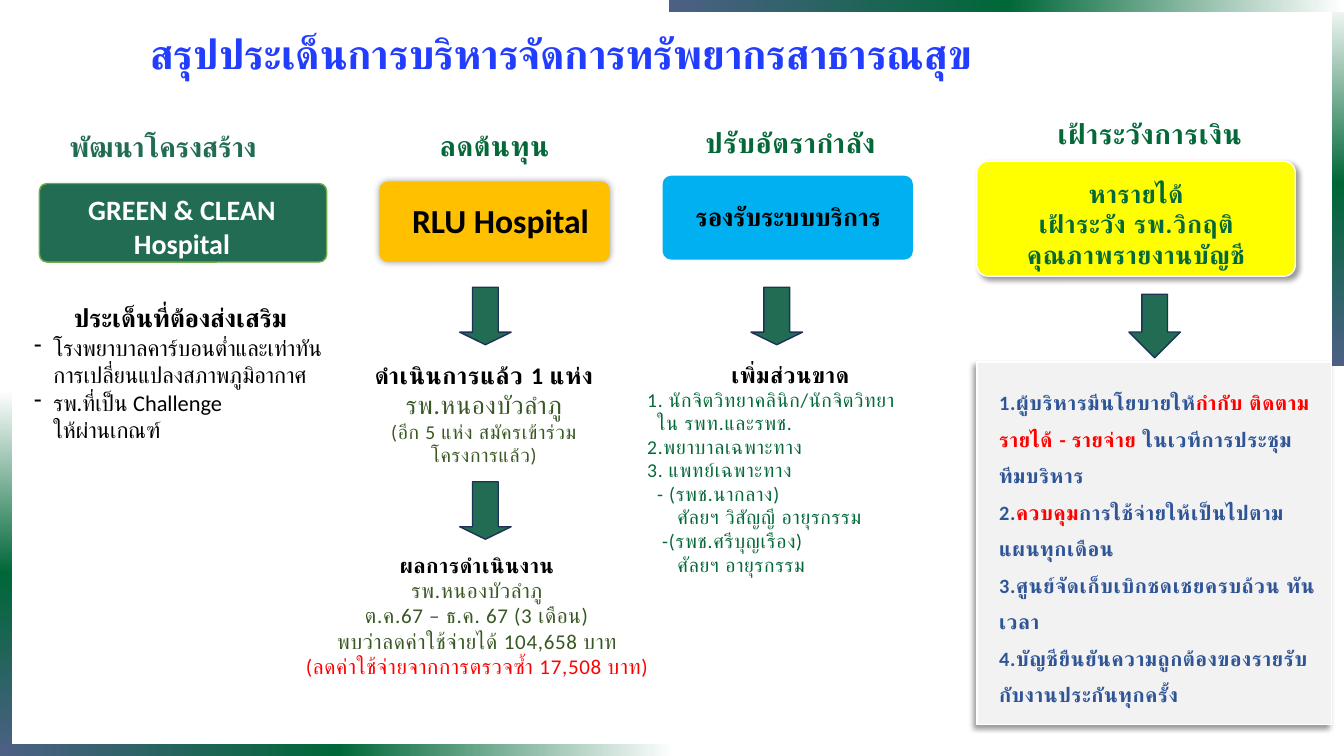
"""Build a one-slide summary of public health resource management."""
from copy import deepcopy
from dataclasses import dataclass

from lxml import etree
from pptx import Presentation
from pptx import util as u
from pptx.dml.color import RGBColor
from pptx.enum import shapes, text
from pptx.oxml import ns

WIDTH, HEIGHT = u.Inches(13.33), u.Inches(7.5)
LEFT, CENTER = text.PP_ALIGN.LEFT, text.PP_ALIGN.CENTER
TOP, BOTTOM = text.MSO_ANCHOR.TOP, text.MSO_ANCHOR.BOTTOM


@dataclass(frozen=True)
class Theme:
    """Hold the colours, font and type sizes of the slide."""
    font: str = "Calibri"
    title_blue: str = "233DFF"
    green: str = "046839"
    pine: str = "216C53"
    olive: str = "385723"
    lime: str = "70AD47"
    navy: str = "1E3256"
    blue: str = "2F5597"
    sky: str = "00B0F0"
    amber: str = "FFC000"
    yellow: str = "FFFF00"
    red: str = "FF0000"
    grey: str = "F2F2F2"
    black: str = "000000"
    white: str = "FFFFFF"
    frame: tuple = ("FFFFFF", "006738", "4C6085")
    title: float = 29.3
    big: float = 24
    heading: float = 20
    label: float = 18
    lead: float = 17
    body: float = 16
    result: float = 15
    finance: float = 14.5
    small: float = 14


T = Theme()


def area(left, top, width, height):
    """Turn percentages of the slide into a position and size."""
    return (round(WIDTH * left / 100), round(HEIGHT * top / 100),
            round(WIDTH * width / 100), round(HEIGHT * height / 100))


def assign(target, values):
    """Set every attribute named in a dict of format values."""
    for name, value in values.items():
        setattr(target, name, value)


def span(words, size, color, bold=False, spacing=0.5):
    """Describe one stretch of equally formatted words."""
    return words, size, color, bold, spacing


def line(*spans, align=CENTER, indent=0, hanging=0, bullet=None, **layout):
    """Describe one paragraph, with indents in inches."""
    return spans, indent, hanging, bullet, {"alignment": align, **layout}


def add_span(para, words, size, color, bold, spacing):
    """Add formatted words, with a line break at each newline."""
    for index, part in enumerate(words.split("\n")):
        if index:
            para.add_line_break()
        run = para.add_run()
        run.text = part
        assign(run.font, {"name": T.font, "size": u.Pt(size), "bold": bold})
        run.font.color.rgb = RGBColor.from_string(color)
        if spacing:
            run.font._element.set("spc", str(round(spacing * 100)))


def write(box, lines, inset=0, anchor=TOP):
    """Fill a box with the described paragraphs."""
    frame = box.text_frame
    sides = ("margin_left", "margin_right", "margin_top", "margin_bottom")
    assign(frame, {"word_wrap": True, "vertical_anchor": anchor,
                   "auto_size": text.MSO_AUTO_SIZE.NONE})
    assign(frame, dict(zip(sides, (u.Inches(inset), u.Inches(inset),
                                   u.Inches(inset / 2), u.Inches(inset / 2)))))
    for index, (spans, indent, hanging, bullet, layout) in enumerate(lines):
        para = frame.add_paragraph() if index else frame.paragraphs[0]
        props = para._p.get_or_add_pPr()
        if indent:
            props.set("marL", str(u.Inches(indent)))
            props.set("indent", str(-u.Inches(hanging)))
        if bullet:
            etree.SubElement(props, ns.qn("a:buChar"), char=bullet)
        assign(para, layout)
        for piece in spans:
            add_span(para, *piece)


def add_text(page, place, lines, **layout):
    """Add a text box."""
    write(page.shapes.add_textbox(*area(*place)), lines, **layout)


def add_heading(page, place, words, color=T.green, align=CENTER, anchor=BOTTOM, spacing=0.5):
    """Add a column heading."""
    heading = span(words, T.heading, color, True, spacing)
    add_text(page, place, [line(heading, align=align)], inset=0.1, anchor=anchor)


def add_block(page, kind, place, fill, outline, adjust=(), shadow=None):
    """Add a filled shape; shadow is blur, distance and angle."""
    block = page.shapes.add_shape(kind, *area(*place))
    block.fill.solid()
    block.fill.fore_color.rgb = RGBColor.from_string(fill)
    block.line.color.rgb = RGBColor.from_string(outline)
    block.line.width = u.Pt(1)
    for index, value in enumerate(adjust):
        block.adjustments[index] = value
    block.shadow.inherit = False
    if shadow:
        blur, distance, angle = shadow
        effects = block._element.spPr.find(ns.qn("a:effectLst"))
        outer = etree.SubElement(
            effects, ns.qn("a:outerShdw"), blurRad=str(u.Pt(blur)),
            dist=str(u.Pt(distance)), dir=str(angle * 60000), rotWithShape="0")
        tint = etree.SubElement(outer, ns.qn("a:srgbClr"), val=T.black)
        etree.SubElement(tint, ns.qn("a:alpha"), val="40000")


def add_card(page, place, fill, outline, label_place, labels, shadow=None):
    """Add a rounded card and its label."""
    add_block(page, shapes.MSO_SHAPE.ROUNDED_RECTANGLE, place, fill, outline, (0.098,), shadow)
    add_text(page, label_place, [line(label) for label in labels])


def add_arrow(page, left, top, height=7.6, head=0.243):
    """Add a downward block arrow."""
    add_block(page, shapes.MSO_SHAPE.DOWN_ARROW, (left, top, 3.83, height),
              T.pine, T.navy, (0.5, head))


def add_frame_bar(page, place, angle):
    """Add a three-colour gradient bar at the slide's edge."""
    bar = page.shapes.add_shape(shapes.MSO_SHAPE.RECTANGLE, *area(*place))
    bar.shadow.inherit = False
    bar.line.fill.background()
    bar.fill.gradient()
    bar.fill.gradient_angle = angle
    stops = next(bar._element.spPr.iter(ns.qn("a:gsLst")))
    stops.insert(1, deepcopy(stops[0]))
    for index, stop in enumerate(bar.fill.gradient_stops):
        stop.position = index / 2
        stop.color.rgb = RGBColor.from_string(T.frame[index])


def add_structure(page):
    """Add the column on structural development."""
    add_heading(page, (4.43, 16.53, 21.75, 5.87), "พัฒนาโครงสร้าง", T.pine, LEFT, TOP, 0)
    add_card(page, (2.93, 24.27, 21.38, 10.4), T.pine, T.lime, (4.5, 25.47, 18.08, 9.07),
             [span("GREEN & CLEAN Hospital", T.heading, T.white, True, 0)])
    goals = ["โรงพยาบาลคาร์บอนต่ำและเท่าทันการเปลี่ยนแปลงสภาพภูมิอากาศ",
             "รพ.ที่เป็น Challenge\nให้ผ่านเกณฑ์"]
    add_text(page, (2.55, 40, 21.75, 33.73), [
        line(span("ประเด็นที่ต้องส่งเสริม", T.label, T.black, True, 0)),
        *(line(span(goal, T.body, T.black, spacing=0), align=LEFT, indent=0.19,
               hanging=0.19, bullet="-", space_before=u.Pt(1)) for goal in goals)])


def add_cost(page):
    """Add the column on cost reduction."""
    add_heading(page, (28.88, 14.8, 15.83, 7.33), "ลดต้นทุน")
    add_card(page, (28.28, 24.13, 17.03, 10.4), T.amber, T.amber, (29.33, 26.4, 15.83, 9.6),
             [span("RLU Hospital", T.big, T.black, True, 0)], (5, 0, 0))
    add_arrow(page, 34.2, 38)
    add_text(page, (26.63, 47.73, 18.75, 10.27), [
        line(span("ดำเนินการแล้ว 1 แห่ง", T.lead, T.black, True)),
        line(span("รพ.หนองบัวลำภู", T.label, T.olive)),
        line(span("(อีก 5 แห่ง สมัครเข้าร่วมโครงการแล้ว)", T.small, T.olive))])
    add_arrow(page, 34.2, 63.73)
    add_text(page, (20.78, 73.07, 29.4, 18.8), [
        line(span("ผลการดำเนินงาน", T.result, T.black, True)),
        line(span("รพ.หนองบัวลำภู", T.result, T.olive)),
        line(span("ต.ค.67 – ธ.ค. 67 (3 เดือน)\nพบว่าลดค่าใช้จ่ายได้ 104,658 บาท", T.result, T.olive)),
        line(span("(ลดค่าใช้จ่ายจากการตรวจซ้ำ 17,508 บาท)", T.result, T.red))])


def add_staffing(page):
    """Add the column on staffing."""
    add_heading(page, (50.48, 14.8, 16.65, 6.93), "ปรับอัตรากำลัง")
    add_card(page, (49.35, 23.33, 18.53, 10.93), T.sky, T.sky, (50.33, 26.67, 16.65, 11.6),
             [span("รองรับระบบบริการ", T.label, T.black, True, 0)])
    add_arrow(page, 55.88, 38)
    needs = [("1. นักจิตวิทยาคลินิก/นักจิตวิทยา\nใน รพท.และรพช.", 0.2, 0.1),
             ("2.พยาบาลเฉพาะทาง", 0.1, 0), ("3. แพทย์เฉพาะทาง", 0.1, 0),
             ("- (รพช.นากลาง)", 0.2, 0), ("ศัลยฯ วิสัญญี อายุรกรรม", 0.4, 0),
             ("-(รพช.ศรีบุญเรือง)", 0.25, 0), ("ศัลยฯ อายุรกรรม", 0.4, 0)]
    add_text(page, (47.4, 47.73, 22.8, 36.4), [
        line(span("เพิ่มส่วนขาด", T.body, T.black, True)),
        *(line(span(need, T.small, T.green), align=LEFT, indent=indent, hanging=hanging)
          for need, indent, hanging in needs)])


def add_finance(page):
    """Add the column on financial monitoring."""
    add_block(page, shapes.MSO_SHAPE.RECTANGLE, (72.68, 47.87, 26.4, 48), T.grey, T.white,
              shadow=(4, 3, 135))
    add_heading(page, (75.45, 14.93, 20.18, 5.6), "เฝ้าระวังการเงิน")
    labels = ("หารายได้", "เฝ้าระวัง รพ.วิกฤติ", "คุณภาพรายงานบัญชี")
    add_card(page, (72.68, 21.33, 23.7, 15.2), T.yellow, T.white, (74.33, 23.6, 20.4, 14.27),
             [span(label, T.label, T.green, True) for label in labels], (4, 3, 45))
    add_arrow(page, 84, 38.93, 8.4, 0.5)
    measures = [
        [("1.ผู้บริหารมีนโยบายให้", T.blue), ("กำกับ ติดตาม รายได้ - รายจ่าย", T.red),
         (" ในเวทีการประชุม\nทีมบริหาร", T.blue)],
        [("2.", T.blue), ("ควบคุม", T.red), ("การใช้จ่ายให้เป็นไปตามแผนทุกเดือน", T.blue)],
        [("3.ศูนย์จัดเก็บเบิกชดเชยครบถ้วน ทันเวลา", T.blue)],
        [("4.บัญชียืนยันความถูกต้องของรายรับกับงานประกันทุกครั้ง", T.blue)]]
    add_text(page, (74.33, 50, 24.08, 37.07), [
        line(*(span(words, T.finance, color, True) for words, color in measure),
             align=LEFT, line_spacing=1.5) for measure in measures])


def main():
    """Build and save the deck."""
    deck = Presentation()
    assign(deck, {"slide_width": WIDTH, "slide_height": HEIGHT})
    page = deck.slides.add_slide(deck.slide_layouts[5])
    title = page.shapes.title
    assign(title, dict(zip(("left", "top", "width", "height"), area(11.18, 2.67, 85, 7.33))))
    write(title, [line(span("สรุปประเด็นการบริหารจัดการทรัพยากรสาธารณสุข", T.title, T.title_blue, True, 0),
                       align=LEFT, line_spacing=u.Pt(41.1))])
    for place, angle in (((99.1, 0, 0.9, 48.4), 270), ((49.8, 0, 50.2, 1.6), 180),
                         ((0, 51.6, 0.9, 48.4), 270), ((0, 98.4, 50.2, 1.6), 180)):
        add_frame_bar(page, place, angle)
    for add_column in (add_structure, add_cost, add_staffing, add_finance):
        add_column(page)
    deck.save("out.pptx")


if __name__ == "__main__":
    main()
